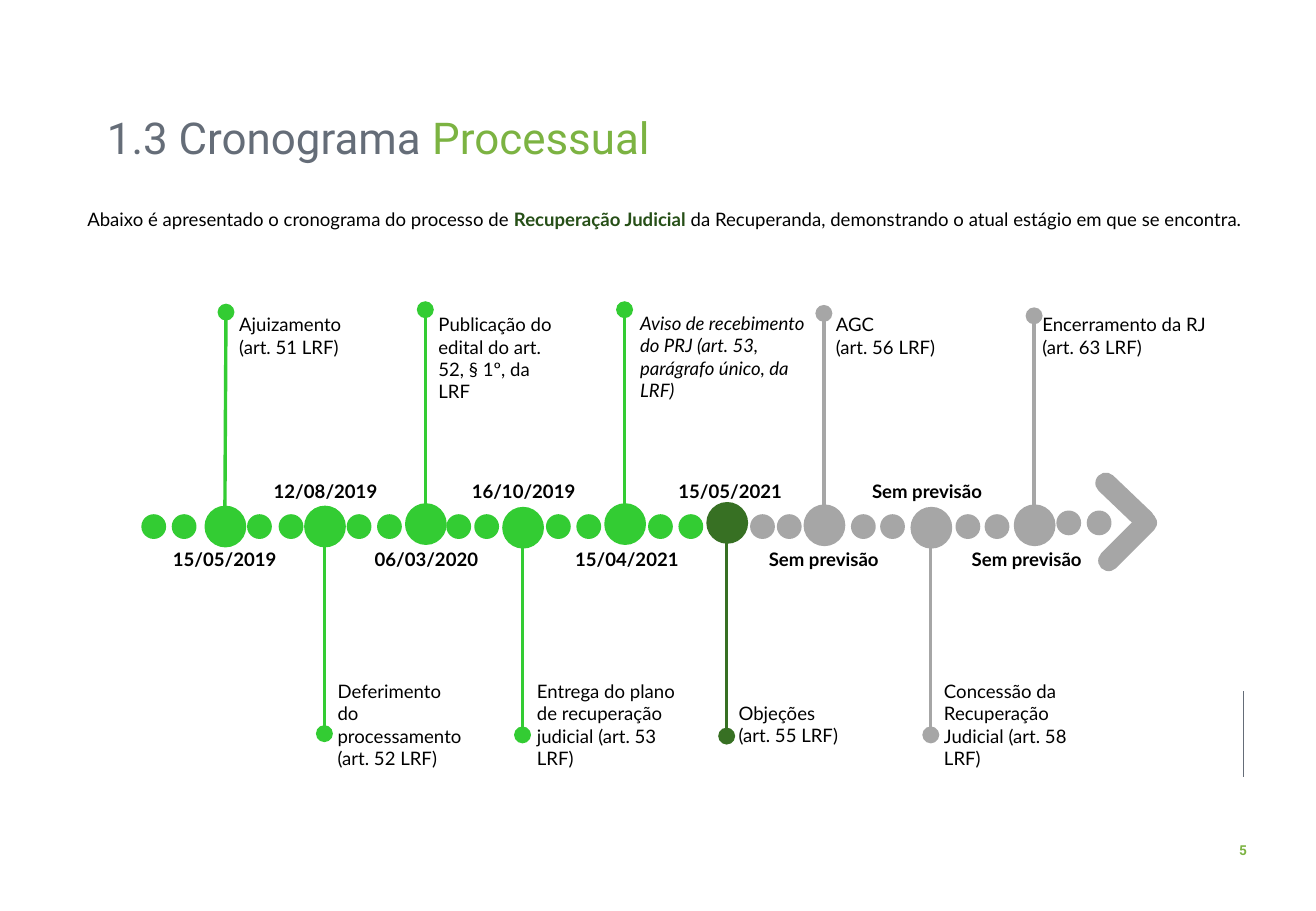
from typing import NamedTuple

from lxml.etree import SubElement
from pptx import Presentation
from pptx.dml.color import RGBColor
from pptx.enum.shapes import MSO_CONNECTOR as Connector, MSO_SHAPE as Shape
from pptx.enum.text import MSO_ANCHOR as Anchor, PP_ALIGN as Align
from pptx.oxml.ns import qn
from pptx.util import Pt

PX = 9144

GREEN = RGBColor(0x33, 0xCC, 0x33)
DARK_GREEN = RGBColor(0x37, 0x70, 0x23)
TEXT_GREEN = RGBColor(0x26, 0x4F, 0x17)
LEAF_GREEN = RGBColor(0x7C, 0xB3, 0x42)
GREY = RGBColor(0xA6, 0xA6, 0xA6)
SLATE = RGBColor(0x65, 0x6D, 0x78)
BLACK = RGBColor(0, 0, 0)

TITLE_FONT, BODY_FONT = "Roboto", "Lato"
BIG_DOT, SMALL_DOT = 33, 19
DATE_ABOVE, DATE_BELOW, DATE_WIDTH = 390, 446, 120


class Milestone(NamedTuple):
    x: int
    dot_top: int
    tip: tuple
    colour: RGBColor
    date: str
    date_x: int
    label: list
    label_box: tuple
    italic: bool = False


MILESTONES = [
    Milestone(185, 417, (186, 257), GREEN, "15/05/2019", 185,
              ["Ajuizamento (art. 51 LRF)"], (187, 253, 111, 47)),
    Milestone(267, 417, (267, 604), GREEN, "12/08/2019", 268,
              ["Deferimento do processamento (art. 52 LRF)"], (268, 555, 124, 66)),
    Milestone(350, 415, (350, 255), GREEN, "06/03/2020", 351,
              ["Publicação do edital do art. 52, § 1º, da LRF"], (351, 253, 116, 66)),
    Milestone(430, 418, (430, 605), GREEN, "16/10/2019", 431,
              ["Entrega do plano de recuperação judicial (art. 53 LRF)"], (432, 555, 147, 66)),
    Milestone(514, 415, (514, 255), GREEN, "15/04/2021", 516,
              ["Aviso de recebimento do PRJ (art. 53, parágrafo único, da LRF)"],
              (517, 252, 157, 84), True),
    Milestone(598, 414, (598, 606), DARK_GREEN, "15/05/2021", 601,
              ["Objeções", "(art. 55 LRF)"], (598, 573, 110, 47)),
    Milestone(678, 416, (678, 258), GREY, "Sem previsão", 678,
              ["AGC", "(art. 56 LRF)"], (678, 253, 110, 47)),
    Milestone(766, 418, (766, 605), GREY, "Sem previsão", 763,
              ["Concessão da Recuperação Judicial (art. 58 LRF)"], (767, 555, 151, 66)),
    Milestone(851, 416, (851, 260), GREY, "Sem previsão", 845,
              ["Encerramento da RJ", "(art. 63 LRF)"], (848, 253, 157, 47)),
]

SMALL_DOTS = [
    (GREEN, 424, [117, 142, 204, 230, 258, 286, 311, 368, 391, 424, 450, 475, 534, 559]),
    (GREY, 424, [618, 640, 701, 725, 787, 811]),
    (GREY, 421, [870, 895]),
]

ARROW_BARS = [(896, 405, 43.7), (898, 438, 315)]


def scaled(*lengths):
    return [length * PX for length in lengths]


def add_run(paragraph, text, size, colour=BLACK, font=BODY_FONT, bold=False, italic=False):
    run = paragraph.add_run()
    run.text = text
    run.font.name = font
    run.font.size = Pt(size)
    run.font.color.rgb = colour
    run.font.bold = bold
    run.font.italic = italic


def add_text(slide, box, lines, align=Align.LEFT, wrap=True):
    frame = slide.shapes.add_textbox(*scaled(*box)).text_frame
    frame.word_wrap = wrap
    for index, runs in enumerate(lines):
        paragraph = frame.paragraphs[0] if index == 0 else frame.add_paragraph()
        paragraph.alignment = align
        for text, style in runs:
            add_run(paragraph, text, **style)


def add_solid(slide, kind, box, colour):
    shape = slide.shapes.add_shape(kind, *scaled(*box))
    shape.shadow.inherit = False
    shape.fill.solid()
    shape.fill.fore_color.rgb = colour
    shape.line.color.rgb = colour
    shape.line.width = Pt(1)
    return shape


def add_line(slide, start, end, colour, width, oval=False):
    connector = slide.shapes.add_connector(Connector.STRAIGHT, *scaled(*start, *end))
    connector.line.color.rgb = colour
    connector.line.width = Pt(width)
    properties = connector._element.spPr
    if oval:
        SubElement(properties.find(qn("a:ln")), qn("a:tailEnd"), type="oval", w="lg", len="lg")
    SubElement(properties, qn("a:effectLst"))


def set_title(slide):
    title = slide.shapes.title
    title.left, title.top, title.width, title.height = scaled(78, 86, 818, 53)
    frame = title.text_frame
    frame.vertical_anchor = Anchor.MIDDLE
    paragraph = frame.paragraphs[0]
    paragraph.alignment = Align.LEFT
    add_run(paragraph, "1.3 Cronograma ", 26, SLATE, TITLE_FONT)
    add_run(paragraph, "Processual", 26, LEAF_GREEN, TITLE_FONT)


def add_milestone(slide, milestone):
    x, dot_top = milestone.x, milestone.dot_top
    add_line(slide, (x, dot_top + BIG_DOT // 2), milestone.tip, milestone.colour, 2, oval=True)
    add_solid(slide, Shape.OVAL, (x - BIG_DOT // 2, dot_top, BIG_DOT, BIG_DOT), milestone.colour)
    label_style = dict(size=11, italic=milestone.italic)
    add_text(slide, milestone.label_box, [[(line, label_style)] for line in milestone.label])
    date_top = DATE_BELOW if milestone.tip[1] < dot_top else DATE_ABOVE
    add_text(slide, (milestone.date_x - DATE_WIDTH // 2, date_top, DATE_WIDTH, 29),
             [[(milestone.date, dict(size=11, bold=True))]], Align.CENTER)


def add_arrow(slide):
    for left, top, angle in ARROW_BARS:
        bar = add_solid(slide, Shape.ROUNDED_RECTANGLE, (left, top, 60, 16), GREY)
        bar.adjustments[0] = 0.5
        bar.rotation = angle


def main():
    presentation = Presentation()
    presentation.slide_width, presentation.slide_height = scaled(1083, 750)
    slide = presentation.slides.add_slide(presentation.slide_layouts[5])
    set_title(slide)
    add_text(slide, (62, 166, 986, 30), [[
        ("Abaixo é apresentado o cronograma do processo de ", dict(size=11)),
        ("Recuperação Judicial ", dict(size=11, colour=TEXT_GREEN, bold=True)),
        ("da Recuperanda, demonstrando o atual estágio em que se encontra.", dict(size=11)),
    ]], Align.JUSTIFY)
    for colour, top, lefts in SMALL_DOTS:
        for left in lefts:
            add_solid(slide, Shape.OVAL, (left, top, SMALL_DOT, SMALL_DOT), colour)
    add_arrow(slide)
    for milestone in MILESTONES:
        add_milestone(slide, milestone)
    add_line(slide, (1023, 569), (1023, 640), SLATE, 0.5)
    page_style = dict(size=8.1, colour=LEAF_GREEN, font=TITLE_FONT, bold=True)
    add_text(slide, (1006, 688, 34, 24), [[("5", page_style)]], Align.CENTER, wrap=False)
    presentation.save("out.pptx")


if __name__ == "__main__":
    main()
